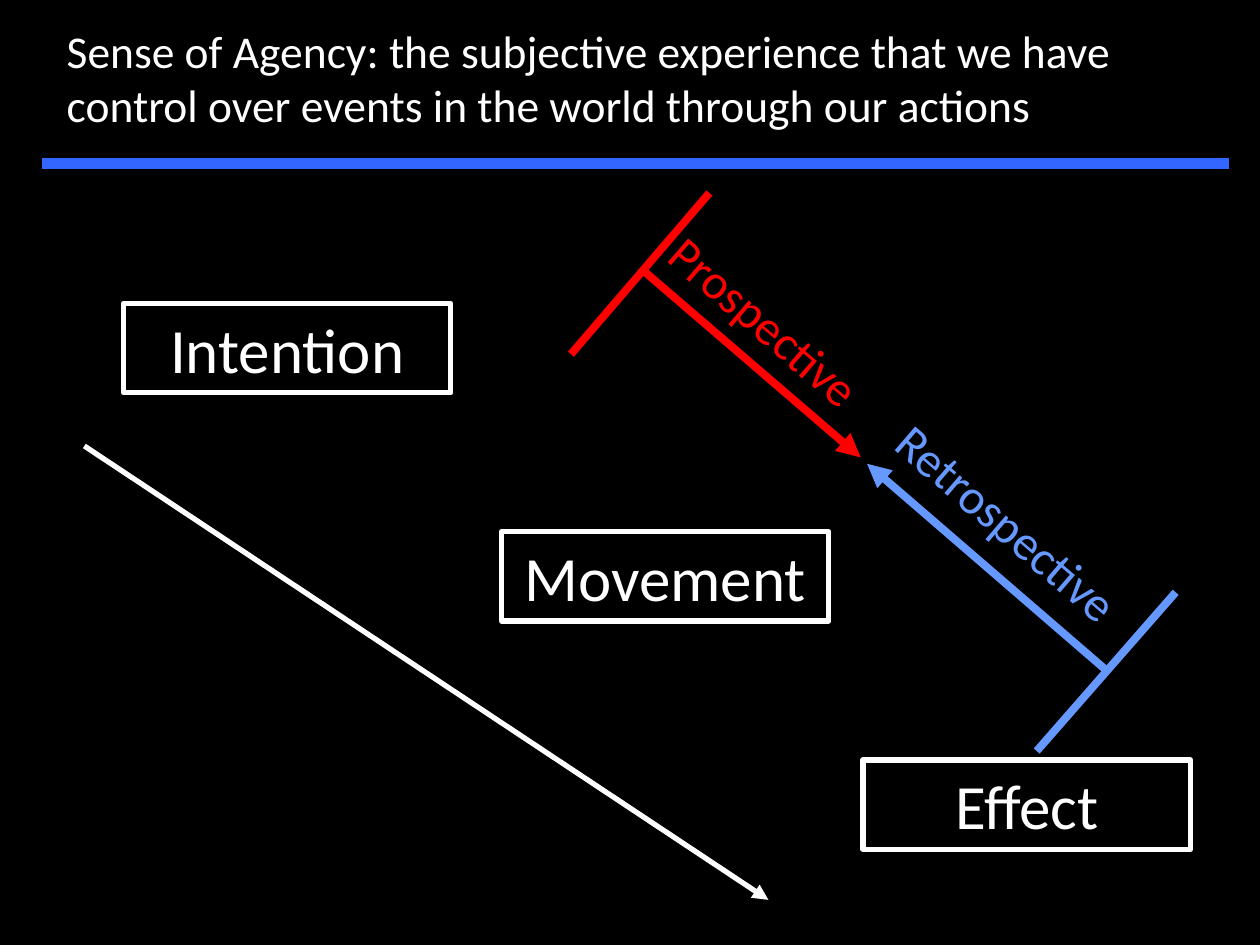
from lxml.etree import SubElement
from pptx import Presentation
from pptx.dml.color import RGBColor
from pptx.enum.shapes import MSO_CONNECTOR, MSO_SHAPE
from pptx.enum.text import MSO_ANCHOR, MSO_AUTO_SIZE, PP_ALIGN
from pptx.oxml.ns import qn
from pptx.util import Cm, Pt

BLACK = RGBColor(0x00, 0x00, 0x00)
WHITE = RGBColor(0xFF, 0xFF, 0xFF)
RED = RGBColor(0xFF, 0x00, 0x00)
SKY = RGBColor(0x66, 0x99, 0xFF)
BLUE = RGBColor(0x33, 0x66, 0xFF)


def add_line(shapes, ends, color, width, arrow=False):
    line = shapes.add_connector(MSO_CONNECTOR.STRAIGHT, *[Cm(n) for n in ends])
    line.line.color.rgb = color
    line.line.width = Pt(width)
    if arrow:
        SubElement(line.line._get_or_add_ln(), qn("a:tailEnd"), type="triangle")
    SubElement(line._element.spPr, qn("a:effectLst"))


def set_text(shape, text, size, color, align, anchor=MSO_ANCHOR.TOP, wrap=True):
    frame = shape.text_frame
    frame.word_wrap = wrap
    frame.auto_size = MSO_AUTO_SIZE.NONE
    frame.vertical_anchor = anchor
    para = frame.paragraphs[0]
    para.alignment = align
    run = para.add_run()
    run.text = text
    run.font.name = "Calibri"
    run.font.size = Pt(size)
    run.font.color.rgb = color


deck = Presentation()
deck.slide_width, deck.slide_height = Cm(25.4), Cm(19.05)
slide = deck.slides.add_slide(deck.slide_layouts[5])
slide.background.fill.solid()
slide.background.fill.fore_color.rgb = BLACK

# Title and rule
title = slide.shapes.title
title.left, title.top, title.width, title.height = Cm(1.09), Cm(0.33), Cm(22.2), Cm(2.49)
set_text(title, "Sense of Agency: the subjective experience that we have "
         "control over events in the world through our actions",
         26, WHITE, PP_ALIGN.LEFT)
add_line(slide.shapes, (0.84, 3.3, 24.77, 3.3), BLUE, 6)

# Two views of agency: a bar, an arrow from it and a slanted label
views = [
    ("Prospective", RED, (14.3, 3.89, 11.51, 7.14),
     (12.95, 5.44, 17.35, 9.22), (12.85, 5.77, 5.21, 1.45)),
    ("Retrospective", SKY, (23.7, 11.94, 20.9, 15.14),
     (22.3, 13.51, 17.48, 9.35), (17.32, 9.83, 6.05, 1.45)),
]
for name, color, bar, arrow, place in views:
    group = slide.shapes.add_group_shape()
    add_line(group.shapes, bar, color, 4.5)
    add_line(group.shapes, arrow, color, 4.5, arrow=True)
    label = group.shapes.add_textbox(*[Cm(n) for n in place])
    label.rotation = 40.7
    set_text(label, name, 28, color, PP_ALIGN.LEFT, wrap=False)

# Time line and its three stages
stages = slide.shapes.add_group_shape()
add_line(stages.shapes, (1.7, 8.99, 15.49, 18.14), WHITE, 3, arrow=True)
for row, (name, left) in enumerate(
        [("Intention", 2.49), ("Movement", 10.11), ("Effect", 17.4)]):
    box = stages.shapes.add_shape(
        MSO_SHAPE.RECTANGLE, Cm(left), Cm(6.12 + 4.6 * row), Cm(6.6), Cm(1.8))
    box.shadow.inherit = False
    box.fill.background()
    box.line.color.rgb = WHITE
    box.line.width = Pt(3)
    set_text(box, name, 36, WHITE, PP_ALIGN.CENTER, MSO_ANCHOR.MIDDLE)

deck.save("out.pptx")
